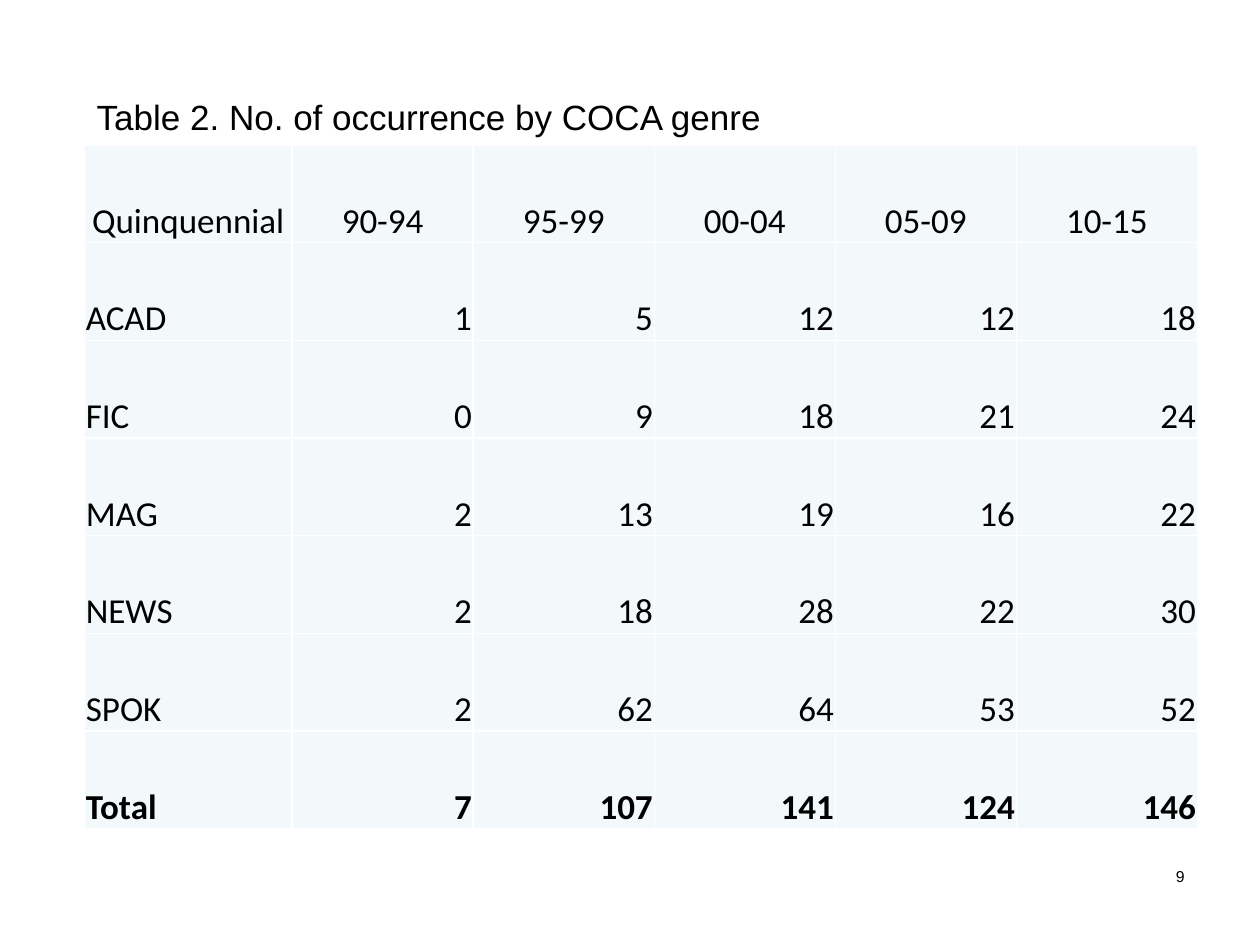
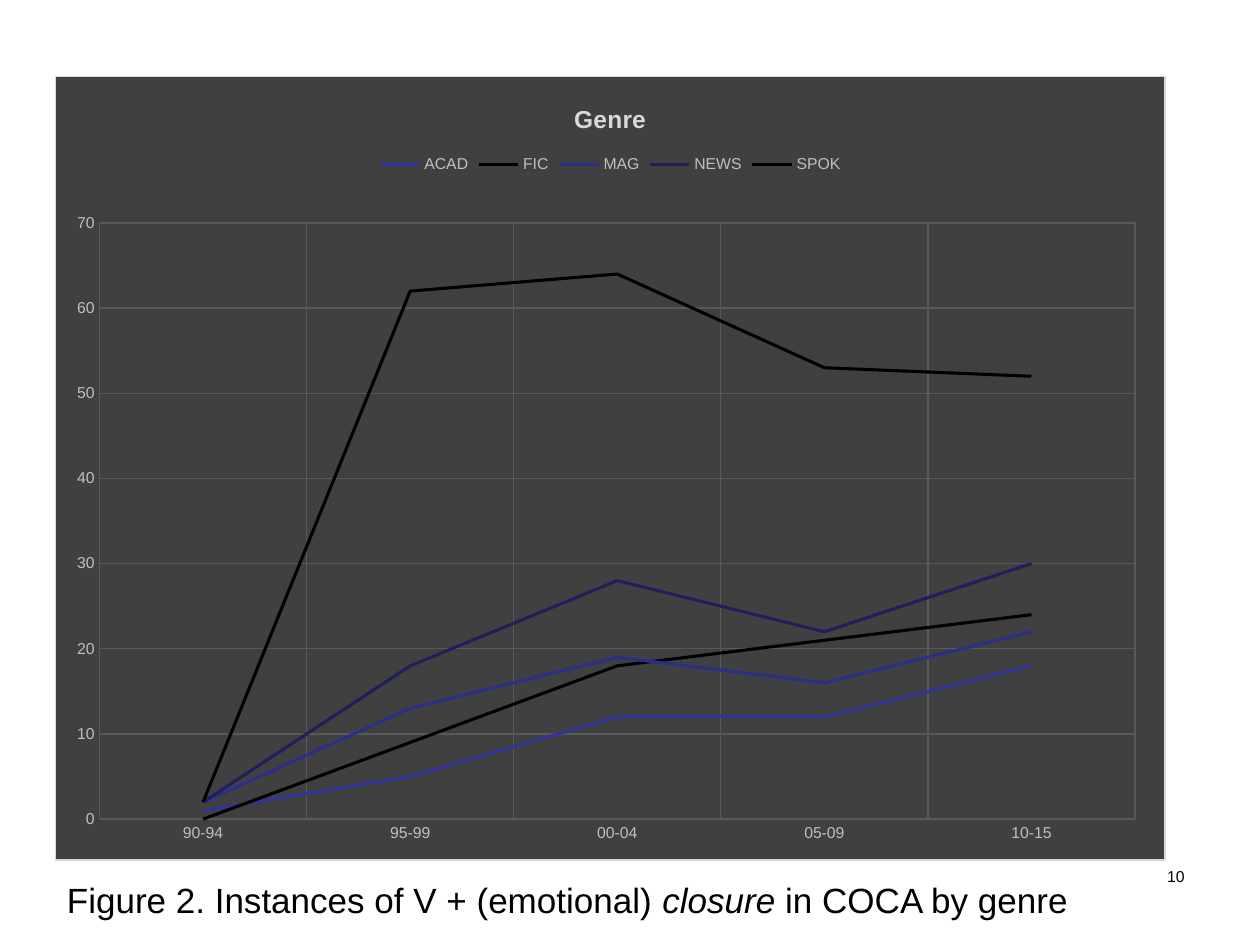
from lxml.etree import SubElement
from pptx import Presentation
from pptx.chart.data import CategoryChartData as ChartData
from pptx.dml.color import RGBColor
from pptx.enum.chart import XL_CHART_TYPE as ChartType
from pptx.enum.chart import XL_LEGEND_POSITION as LegendPosition
from pptx.enum.chart import XL_MARKER_STYLE as Marker
from pptx.enum.chart import XL_TICK_MARK as TickMark
from pptx.enum.text import MSO_ANCHOR as Anchor
from pptx.enum.text import PP_ALIGN as Align
from pptx.oxml import parse_xml
from pptx.oxml.ns import nsdecls, qn
from pptx.util import Cm, Pt

BLACK = RGBColor(0x00, 0x00, 0x00)
WHITE = RGBColor(0xFF, 0xFF, 0xFF)
CELL_TINT = RGBColor(0xF3, 0xF9, 0xFA)
CHARCOAL = RGBColor(0x40, 0x40, 0x40)
GRID_GREY = RGBColor(0x59, 0x59, 0x59)
LABEL_GREY = RGBColor(0xBF, 0xBF, 0xBF)
PALE_GREY = RGBColor(0xD9, 0xD9, 0xD9)
INDIGO = RGBColor(0x33, 0x33, 0x99)
DEEP_INDIGO = RGBColor(0x2D, 0x2D, 0x8A)
NAVY = RGBColor(0x1F, 0x1F, 0x5C)

PERIODS = ["90-94", "95-99", "00-04", "05-09", "10-15"]
GENRES = {
    "ACAD": [1, 5, 12, 12, 18],
    "FIC": [0, 9, 18, 21, 24],
    "MAG": [2, 13, 19, 16, 22],
    "NEWS": [2, 18, 28, 22, 30],
    "SPOK": [2, 62, 64, 53, 52],
}
GENRE_COLOURS = [INDIGO, BLACK, DEEP_INDIGO, NAVY, BLACK]
PLOT_LAYOUT = {"x": 0.04, "y": 0.187, "w": 0.933, "h": 0.761}


def style_font(font, size=20, colour=BLACK, name="Arial", bold=False, italic=False):
    """Give a font its size, colour, face and emphasis."""
    font.size, font.name = Pt(size), name
    font.bold, font.italic = bold, italic
    font.color.rgb = colour


def write(para, text, align=Align.LEFT, **style):
    """Append a formatted span of text to a paragraph."""
    para.alignment = align
    span = para.add_run()
    span.text = text
    style_font(span.font, **style)


class Deck:
    """Holds the presentation, its style and the current page."""

    def __init__(self):
        """Start an empty deck of 4:3 pages."""
        self.show = Presentation()
        self.show.slide_width, self.show.slide_height = Cm(25.4), Cm(19.05)
        self.page = None

    def add_page(self, number):
        """Open a blank page and print its number."""
        self.page = self.show.slides.add_slide(self.show.slide_layouts[6])
        para = self.add_box(22.22, 17.35, 1.91, 1.27)
        write(para, str(number), align=Align.RIGHT, size=9)

    def add_box(self, left, top, width, height):
        """Add a wrapping text box and return its paragraph."""
        box = self.page.shapes.add_textbox(Cm(left), Cm(top), Cm(width), Cm(height))
        box.text_frame.word_wrap = True
        return box.text_frame.paragraphs[0]

    def add_caption(self, left, top, width, *spans):
        """Add a caption made of (text, italic) spans."""
        para = self.add_box(left, top, width, 1.12)
        for text, italic in spans:
            write(para, text, italic=italic)

    def fill_cell(self, cell, text, align, bold):
        """Write one table cell with its tint, margins and white borders."""
        cell.fill.solid()
        cell.fill.fore_color.rgb = CELL_TINT
        cell.vertical_anchor = Anchor.BOTTOM
        cell.margin_left = cell.margin_top = cell.margin_right = Cm(0.03)
        cell.margin_bottom = 0
        write(cell.text_frame.paragraphs[0], text, align=align, name="Calibri", bold=bold)
        properties = cell._tc.get_or_add_tcPr()
        for position, side in enumerate(["lnL", "lnR", "lnT", "lnB"]):
            border = parse_xml(
                f'<a:{side} {nsdecls("a")} w="{Pt(1)}"><a:solidFill>'
                f'<a:srgbClr val="{WHITE}"/></a:solidFill></a:{side}>')
            properties.insert(position, border)

    def add_table(self, left, top, widths, row_height, rows):
        """Add a table with a centred header row and a bold last row."""
        frame = self.page.shapes.add_table(
            len(rows), len(widths), Cm(left), Cm(top),
            Cm(sum(widths)), Cm(row_height * len(rows)))
        table = frame.table
        for column, width in zip(table.columns, widths):
            column.width = Cm(width)
        for row_index, values in enumerate(rows):
            for column_index, value in enumerate(values):
                align = Align.RIGHT if column_index else Align.LEFT
                if row_index == 0:
                    align = Align.CENTER
                self.fill_cell(table.cell(row_index, column_index), str(value),
                               align, bold=row_index == len(rows) - 1)

    def add_line_chart(self, left, top, width, height, title):
        """Add the dark line chart of all genres."""
        data = ChartData()
        data.categories = PERIODS
        for genre, counts in GENRES.items():
            data.add_series(genre, counts)
        chart = self.page.shapes.add_chart(
            ChartType.LINE, Cm(left), Cm(top), Cm(width), Cm(height), data).chart
        style_font(chart.font, size=10)
        chart.has_title = True
        write(chart.chart_title.text_frame.paragraphs[0], title, align=Align.CENTER,
              size=14, colour=PALE_GREY, bold=True)
        chart.chart_title.include_in_layout = False
        chart.has_legend = True
        chart.legend.position = LegendPosition.TOP
        chart.legend.include_in_layout = False
        style_font(chart.legend.font, size=9, colour=LABEL_GREY)
        self.style_axes(chart)
        chart.plots[0].vary_by_categories = False
        for series, colour in zip(chart.plots[0].series, GENRE_COLOURS):
            series.smooth = False
            series.marker.style = Marker.NONE
            series.format.line.width = Pt(1.75)
            series.format.line.color.rgb = colour
        self.frame_chart(chart)

    def style_axes(self, chart):
        """Give both axes grey labels and gridlines but no line or ticks."""
        for axis in (chart.category_axis, chart.value_axis):
            axis.major_tick_mark = axis.minor_tick_mark = TickMark.NONE
            axis.format.line.fill.background()
            axis.has_major_gridlines = True
            axis.major_gridlines.format.line.width = Pt(0.75)
            axis.major_gridlines.format.line.color.rgb = GRID_GREY
            style_font(axis.tick_labels.font, size=9, colour=LABEL_GREY)
        chart.value_axis.minimum_scale, chart.value_axis.maximum_scale = 0, 70
        chart.value_axis.major_unit = 10

    def frame_chart(self, chart):
        """Set the chart background, its border and the inner plot area."""
        body = chart.element.find(qn("c:chart"))
        body.addnext(parse_xml(
            f'<c:spPr {nsdecls("c", "a")}><a:solidFill><a:srgbClr val="{CHARCOAL}"/>'
            f'</a:solidFill><a:ln w="{Pt(0.75)}"><a:solidFill>'
            f'<a:srgbClr val="{PALE_GREY}"/></a:solidFill></a:ln></c:spPr>'))
        plot_area = body.find(qn("c:plotArea"))
        for layout in plot_area.findall(qn("c:layout")):
            plot_area.remove(layout)
        layout = parse_xml(f'<c:layout {nsdecls("c")}/>')
        plot_area.insert(0, layout)
        manual = SubElement(layout, qn("c:manualLayout"))
        settings = {"layoutTarget": "inner", "xMode": "edge", "yMode": "edge", **PLOT_LAYOUT}
        for tag, value in settings.items():
            SubElement(manual, qn(f"c:{tag}")).set("val", str(value))


def main():
    """Build the table page and the chart page."""
    deck = Deck()

    deck.add_page(9)
    totals = [sum(counts) for counts in zip(*GENRES.values())]
    rows = [["Quinquennial", *PERIODS]]
    rows += [[genre, *counts] for genre, counts in GENRES.items()]
    rows.append(["Total", *totals])
    deck.add_table(1.7, 2.92, [4.19] + [3.65] * len(PERIODS), 1.97, rows)
    deck.add_caption(1.7, 1.8, 20, ("Table 2. No. of occurrence by COCA genre", False))

    deck.add_page(10)
    deck.add_line_chart(1.1, 1.53, 22.4, 15.82, "Genre")
    deck.add_caption(1.1, 17.58, 22,
                     ("Figure 2. Instances of V + (emotional) ", False),
                     ("closure", True), (" in COCA by genre", False))

    deck.show.save("out.pptx")


if __name__ == "__main__":
    main()
